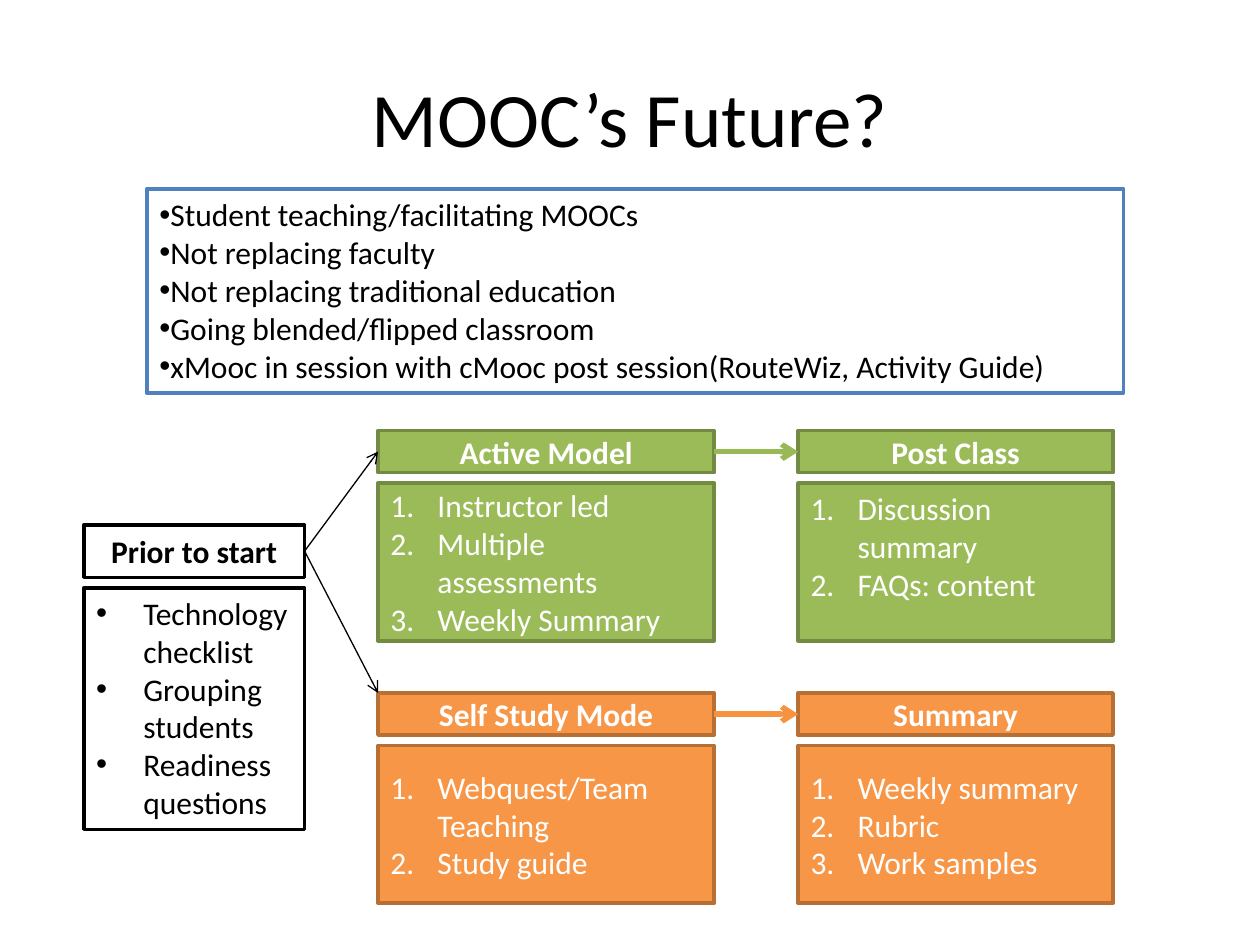
from lxml.etree import SubElement
from pptx import Presentation
from pptx.dml.color import RGBColor
from pptx.enum.shapes import MSO_CONNECTOR as Connector, MSO_SHAPE as Shape
from pptx.enum.text import MSO_ANCHOR as Anchor, MSO_AUTO_SIZE as AutoSize, PP_ALIGN as Align
from pptx.oxml.ns import qn
from pptx.util import Cm, Pt

TITLE = "MOOC’s Future?"
IDEAS = [
    "Student teaching/facilitating MOOCs",
    "Not replacing faculty",
    "Not replacing traditional education",
    "Going blended/flipped classroom",
    "xMooc in session with cMooc post session(RouteWiz, Activity Guide)",
]

# Lengths in cm
GAP = 0.21
INDENT = 0.95
PRIOR = {"left": 1.69, "width": 4.45, "top": 10.58, "head": 1.06, "body": 4.87}
MODEL = {"left": 7.62, "width": 6.78, "head": 0.85, "body": 3.18}
FOLLOW_UP = {"left": 16.09, "width": 6.35, "head": 0.85, "body": 3.18}
ACTIVE_TOP, SELF_TOP = 8.68, 13.97

BLACK = {"fill": "FFFFFF", "line": "000000", "text": "000000"}
GREEN = {"fill": "9BBB59", "line": "738A42", "text": "FFFFFF", "arrow": "98B955"}
ORANGE = {"fill": "F79646", "line": "B76F34", "text": "FFFFFF", "arrow": "F69240"}

# heading, items, place, colours, numbered, anchor of the items
CARDS = [
    ("Prior to start", ["Technology checklist", "Grouping students", "Readiness questions"],
     PRIOR, BLACK, False, Anchor.TOP),
    ("Active Model", ["Instructor led", "Multiple assessments", "Weekly Summary"],
     MODEL | {"top": ACTIVE_TOP}, GREEN, True, Anchor.MIDDLE),
    ("Post Class", ["Discussion summary", "FAQs: content"],
     FOLLOW_UP | {"top": ACTIVE_TOP}, GREEN, True, Anchor.TOP),
    ("Self Study Mode", ["Webquest/Team Teaching", "Study guide"],
     MODEL | {"top": SELF_TOP}, ORANGE, True, Anchor.MIDDLE),
    ("Summary", ["Weekly summary", "Rubric", "Work samples"],
     FOLLOW_UP | {"top": SELF_TOP}, ORANGE, True, Anchor.MIDDLE),
]


def paint(target, colour):
    """Give a fill, or the fill of a line, one solid colour."""
    target.solid()
    target.fore_color.rgb = RGBColor.from_string(colour)


def place(shape, left, top, width, height):
    shape.left, shape.top, shape.width, shape.height = map(Cm, (left, top, width, height))


def set_marker(para, numbered, indent):
    properties = para._p.get_or_add_pPr()
    properties.set("marL", str(Cm(indent)))
    properties.set("indent", str(-Cm(indent)))
    if numbered:
        SubElement(properties, qn("a:buFont"), typeface="+mj-lt")
        SubElement(properties, qn("a:buAutoNum"), type="arabicPeriod")
    else:
        SubElement(properties, qn("a:buFont"), typeface="Arial")
        SubElement(properties, qn("a:buChar"), char="•")


def write(shape, lines, colour, size=18, bold=False, align=Align.LEFT, anchor=Anchor.MIDDLE):
    frame = shape.text_frame
    frame.text = "\n".join(lines)
    for name, value in {"word_wrap": True, "auto_size": AutoSize.NONE,
                        "vertical_anchor": anchor}.items():
        setattr(frame, name, value)
    for para in frame.paragraphs:
        para.alignment = align
        para.space_before = Pt(0)
        for span in para.runs:
            for name, value in {"name": "Calibri", "size": Pt(size), "bold": bold}.items():
                setattr(span.font, name, value)
            paint(span.font.fill, colour)
    return frame.paragraphs


def add_box(page, left, top, width, height, colours):
    box = page.shapes.add_shape(Shape.RECTANGLE, 0, 0, 0, 0)
    place(box, left, top, width, height)
    box.shadow.inherit = False
    paint(box.fill, colours["fill"])
    paint(box.line.fill, colours["line"])
    box.line.width = Pt(2)
    return box


def add_card(page, heading, items, spot, colours, numbered, anchor):
    left, top, width = spot["left"], spot["top"], spot["width"]
    head = add_box(page, left, top, width, spot["head"], colours)
    write(head, [heading], colours["text"], bold=True, align=Align.CENTER)
    body = add_box(page, left, top + spot["head"] + GAP, width, spot["body"], colours)
    for para in write(body, items, colours["text"], anchor=anchor):
        set_marker(para, numbered, INDENT)


def add_arrow(page, start, end, colour, width):
    arrow = page.shapes.add_connector(Connector.STRAIGHT, *map(Cm, start + end))
    paint(arrow.line.fill, colour)
    arrow.line.width = Pt(width)
    SubElement(arrow.line._get_or_add_ln(), qn("a:tailEnd"), type="arrow")
    SubElement(arrow._element.spPr, qn("a:effectLst"))


def main():
    deck = Presentation()
    deck.slide_width, deck.slide_height = Cm(25.4), Cm(19.05)
    page = deck.slides.add_slide(deck.slide_layouts[1])

    title, ideas = page.placeholders
    place(title, 1.27, 0.76, 22.86, 3.18)
    write(title, [TITLE], "000000", size=44, align=Align.CENTER)
    place(ideas, 2.96, 3.81, 19.69, 4.11)
    paint(ideas.line.fill, "4F81BD")
    ideas.line.width = Pt(2.25)
    for para in write(ideas, IDEAS, "000000", anchor=Anchor.TOP):
        set_marker(para, False, 0)

    for card in CARDS:
        add_card(page, *card)

    half_head = MODEL["head"] / 2
    prior_exit = (PRIOR["left"] + PRIOR["width"], PRIOR["top"] + PRIOR["head"] / 2)
    for top in (ACTIVE_TOP + half_head, SELF_TOP):
        add_arrow(page, prior_exit, (MODEL["left"], top), "000000", 0.75)
    for top, colours in ((ACTIVE_TOP, GREEN), (SELF_TOP, ORANGE)):
        middle = top + half_head
        add_arrow(page, (MODEL["left"] + MODEL["width"], middle),
                  (FOLLOW_UP["left"], middle), colours["arrow"], 3)

    deck.save("out.pptx")


if __name__ == "__main__":
    main()
